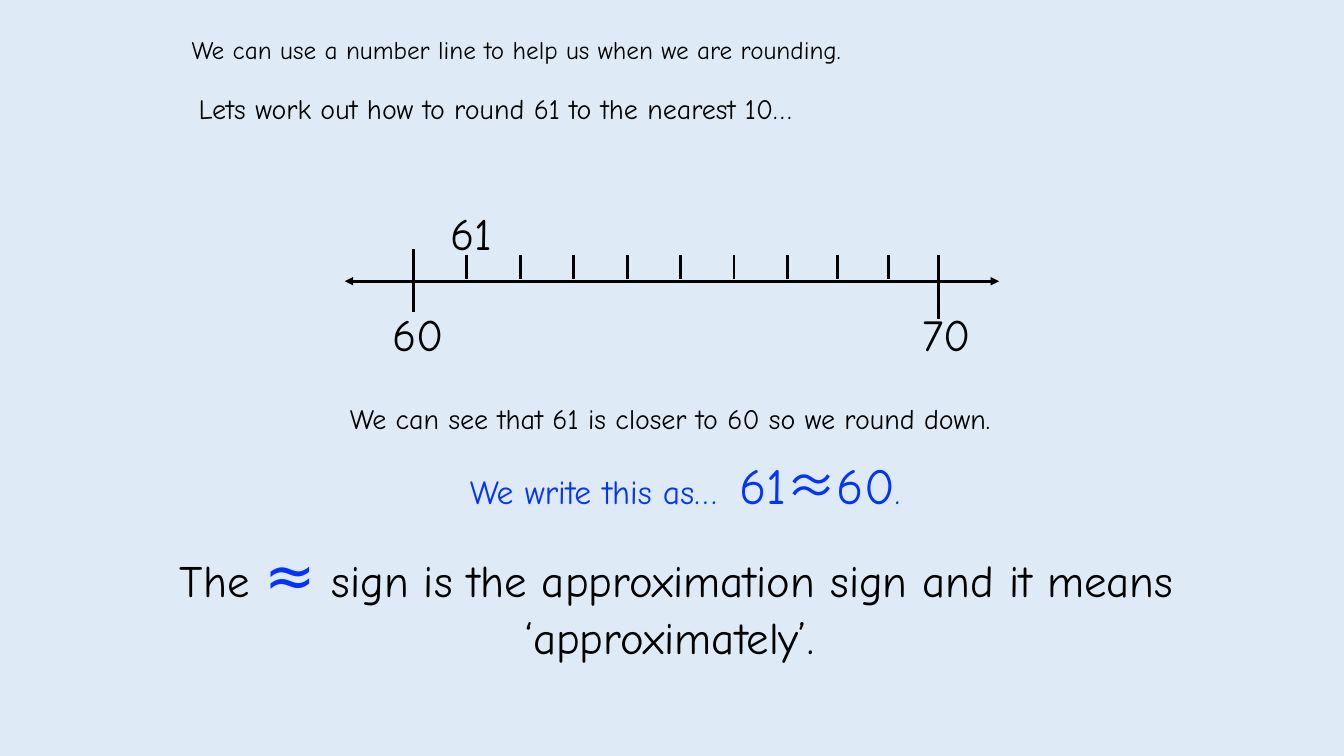
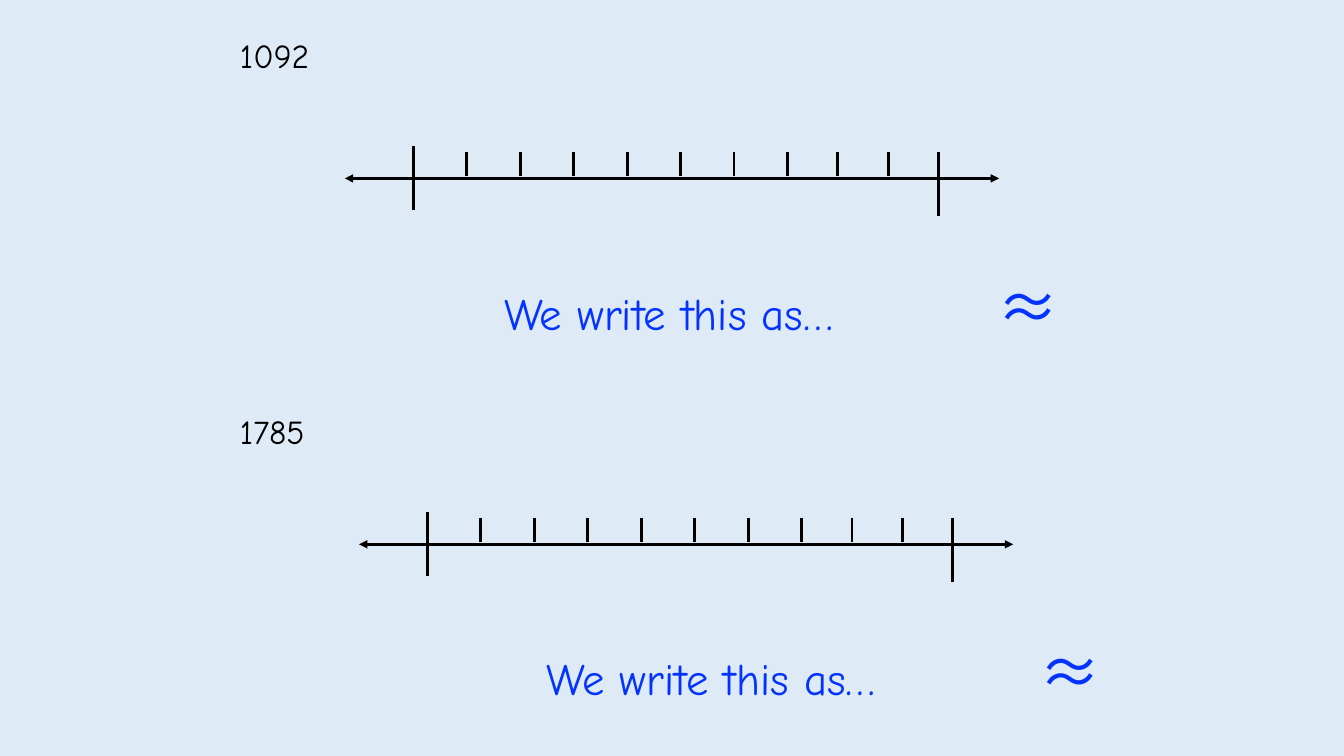
from itertools import accumulate

from lxml import etree
from pptx import Presentation
from pptx.dml.color import RGBColor
from pptx.enum.shapes import MSO_CONNECTOR
from pptx.enum.text import MSO_ANCHOR, MSO_AUTO_SIZE, PP_ALIGN
from pptx.oxml.ns import qn
from pptx.util import Emu, Pt

STRAIGHT = MSO_CONNECTOR.STRAIGHT
MIDDLE = MSO_ANCHOR.MIDDLE
FIXED = MSO_AUTO_SIZE.NONE
LEFT, CENTER = PP_ALIGN.LEFT, PP_ALIGN.CENTER

SKY, BLACK, BLUE = "DEEBF7", "000000", "0433FF"
FONT, SIGN = "Comic Neue", "Noto Sans CJK JP"
WIDTH, HEIGHT, INSET = 1333, 750, 4
GAPS = [53] * 7 + [50] * 3  # the last three gaps are narrower


def px(n):
    """100 px make one inch."""
    return Emu(n * 9144)


def color(code):
    return RGBColor.from_string(code)


def text(slide, box, runs, size=20, ink=BLACK, align=LEFT, tab=None, shape=None):
    """Write runs, each a string or (string, format), into a box."""
    spot = [px(n) for n in box]
    if shape is None:
        shape = slide.shapes.add_textbox(*spot)
    shape.left, shape.top, shape.width, shape.height = spot
    frame = shape.text_frame
    frame.word_wrap = True
    frame.auto_size = FIXED
    frame.vertical_anchor = MIDDLE
    frame.margin_left = frame.margin_right = px(INSET)
    frame.margin_top = frame.margin_bottom = px(INSET)
    para = frame.paragraphs[0]
    para.alignment = align
    if tab:
        stops = etree.SubElement(para._p.get_or_add_pPr(), qn("a:tabLst"))
        etree.SubElement(stops, qn("a:tab"), pos=str(px(tab)), algn="l")
    for part in [runs] if isinstance(runs, str) else runs:
        words, style = (part, {}) if isinstance(part, str) else part
        run = para.add_run()
        run.text = words
        run.font.name = style.get("font", FONT)
        run.font.size = Pt(style.get("size", size))
        run.font.color.rgb = color(style.get("ink", ink))


def line(group, x1, y1, x2, y2, arrow=False):
    rule = group.shapes.add_connector(STRAIGHT, px(x1), px(y1), px(x2), px(y2))
    rule.line.color.rgb = color(BLACK)
    rule.line.width = Pt(2)
    if arrow:
        etree.SubElement(rule.line._get_or_add_ln(), qn("a:tailEnd"), type="triangle")
    etree.SubElement(rule._element.spPr, qn("a:effectLst"))


def axis(slide, left, top):
    """Number line with ten gaps and long end marks."""
    group = slide.shapes.add_group_shape()
    base = top + 32
    line(group, left + 62, base, left + 649, base, arrow=True)
    line(group, left + 72, base, left, base, arrow=True)
    marks = list(accumulate(GAPS, initial=left + 68))
    line(group, marks[0], top, marks[0], top + 63)
    for x in marks[1:-1]:
        line(group, x, top + 6, x, top + 30)
    line(group, marks[-1], top + 6, marks[-1], top + 69)


def lesson(slide):
    """Worked example: rounding 61."""
    text(slide, (186, 30, 692, 38),
         "We can use a number line to help us when we are rounding.",
         size=18, shape=slide.shapes.title)
    text(slide, (193, 86, 658, 42), "Lets work out how to round 61 to the nearest 10…")

    # Number line and its labels
    left, top = 342, 247
    axis(slide, left, top)
    for label, x, y in (("60", 43, 53), ("70", 569, 53), ("61", 101, -47)):
        text(slide, (left + x, top + y, 63, 62), label, size=32)

    # Conclusion
    text(slide, (343, 394, 709, 42),
         "We can see that 61 is closer to 60 so we round down.")
    text(slide, (462, 446, 469, 68),
         [("We write this as…  ", {"size": 24}), "61", ("≈", {"font": SIGN}),
          "60", (".", {"size": 24})], size=36, ink=BLUE)
    text(slide, (101, 527, 1141, 136),
         ["The ", ("≈", {"size": 44, "ink": BLUE}),
          " sign is the approximation sign and it means ‘approximately’. "],
         size=32, align=CENTER)


def task(slide, number, top, line_at, note_at, shape=None):
    """Number to round, blank number line and answer prompt."""
    text(slide, (234, top, 84, 48), number, size=24, shape=shape)
    axis(slide, *line_at)
    text(slide, (*note_at, 578, 82),
         ["We write this as…\t", ("≈", {"size": 44, "font": SIGN})],
         size=32, ink=BLUE, tab=489)


def main():
    deck = Presentation()
    deck.slide_width, deck.slide_height = px(WIDTH), px(HEIGHT)
    fill = deck.slide_master.background.fill
    fill.solid()
    fill.fore_color.rgb = color(SKY)
    plain = deck.slide_layouts[5]

    lesson(deck.slides.add_slide(plain))

    drill = deck.slides.add_slide(plain)
    task(drill, "1092", 31, (342, 145), (496, 262), shape=drill.shapes.title)
    task(drill, "1785", 404, (356, 508), (538, 625))

    deck.save("out.pptx")


if __name__ == "__main__":
    main()
